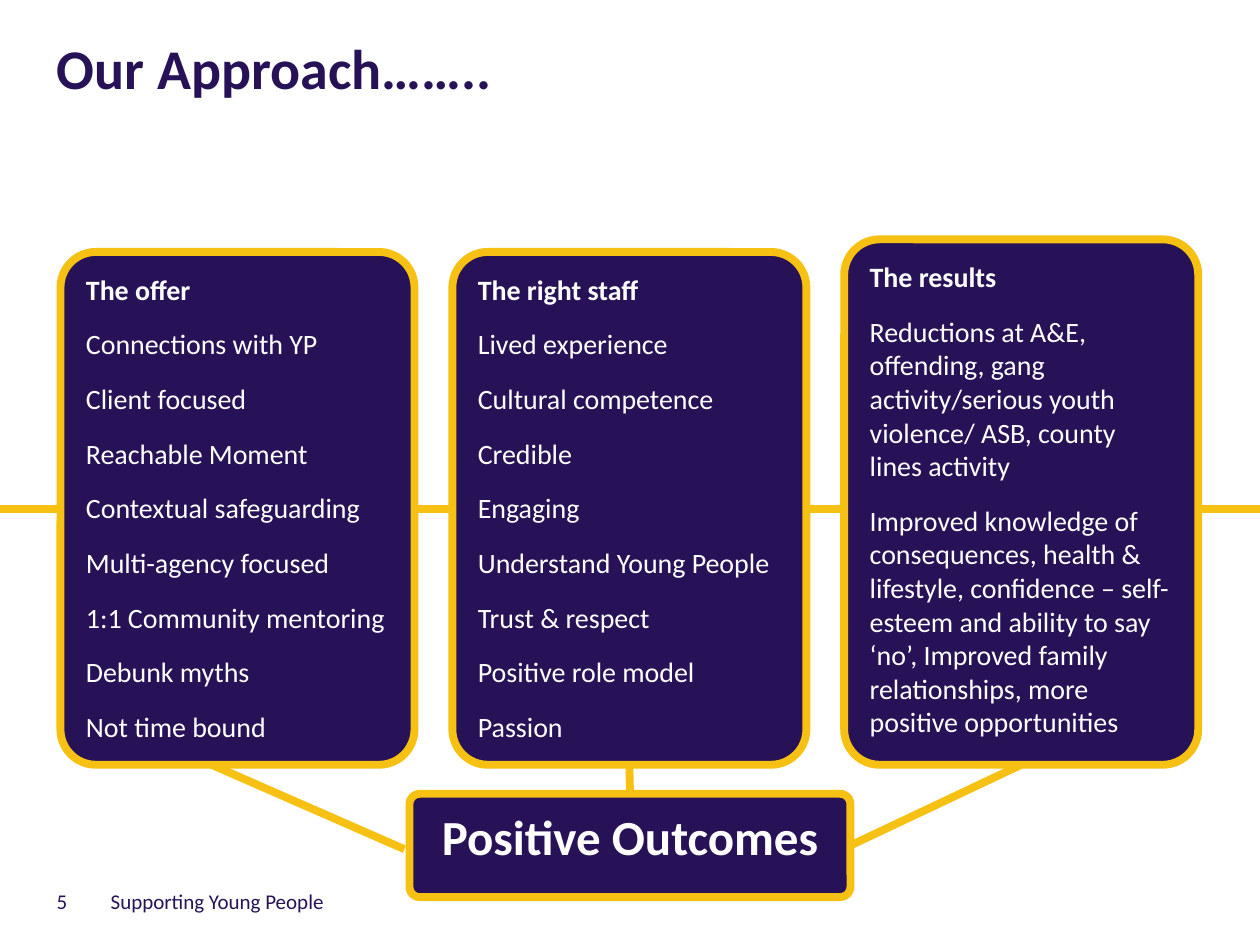
from lxml import etree
from pptx import Presentation
from pptx.dml.color import RGBColor
from pptx.enum import shapes, text
from pptx.oxml.ns import qn
from pptx.util import Inches, Pt

NAVY, GOLD, WHITE = "281257", "F6C112", "FFFFFF"
LINE_WIDTH = Pt(4.5)
CARD_LEFT, CARD_PITCH, CARD_WIDTH, CARD_BOTTOM = 0.48, 3.11, 2.81, 6.07

CARDS = [
    (2.0, "The offer", [
        "Connections with YP", "Client focused", "Reachable Moment",
        "Contextual safeguarding", "Multi-agency focused",
        "1:1 Community mentoring", "Debunk myths", "Not time bound"]),
    (2.0, "The right staff", [
        "Lived experience", "Cultural competence", "Credible", "Engaging",
        "Understand Young People", "Trust & respect", "Positive role model",
        "Passion"]),
    (1.9, "The results", [
        "Reductions at A&E, offending, gang activity/serious youth violence/ "
        "ASB, county lines activity",
        "Improved knowledge of consequences, health & lifestyle, confidence – "
        "self-esteem and ability to say ‘no’, Improved family relationships, "
        "more positive opportunities"]),
]


def rgb(value):
    return RGBColor.from_string(value)


def apply(target, values):
    for name, value in values.items():
        setattr(target, name, value)


def format_font(font, color, size, bold=False):
    apply(font, {"name": "Calibri", "size": Pt(size), "bold": bold})
    font.color.rgb = rgb(color)


def set_title(slide, wording):
    title = slide.shapes.title
    apply(title, {"left": Inches(0.35), "top": Inches(0.28),
                  "width": Inches(8.62), "height": Inches(0.52)})
    title.text_frame.vertical_anchor = text.MSO_ANCHOR.TOP
    title.text_frame.text = wording
    paragraph = title.text_frame.paragraphs[0]
    apply(paragraph, {"alignment": text.PP_ALIGN.LEFT, "line_spacing": 0.9})
    format_font(paragraph.font, NAVY, 32, True)


def add_footer(slide, left, width, wording):
    box = slide.shapes.add_textbox(Inches(left), Inches(6.95), Inches(width), Inches(0.4))
    apply(box.text_frame, {"word_wrap": True, "vertical_anchor": text.MSO_ANCHOR.MIDDLE})
    paragraph = box.text_frame.paragraphs[0]
    paragraph.text = wording
    format_font(paragraph.font, NAVY, 12)


def add_panel(slide, left, top, width, height, heading, items=(), size=16,
              align=text.PP_ALIGN.LEFT):
    """Add a rounded panel with a bold heading above plain items."""
    panel = slide.shapes.add_shape(
        shapes.MSO_SHAPE.ROUNDED_RECTANGLE,
        Inches(left), Inches(top), Inches(width), Inches(height))
    panel.shadow.inherit = False
    panel.adjustments[0] = 0.1
    panel.fill.solid()
    panel.fill.fore_color.rgb = rgb(NAVY)
    panel.line.color.rgb = rgb(GOLD)
    panel.line.width = LINE_WIDTH
    frame = panel.text_frame
    apply(frame, {"word_wrap": True, "vertical_anchor": text.MSO_ANCHOR.TOP,
                  "margin_left": Inches(0.12), "margin_right": Inches(0.12),
                  "margin_top": Inches(0.08), "margin_bottom": Inches(0.08)})
    for index, wording in enumerate([heading, *items]):
        paragraph = frame.add_paragraph() if index else frame.paragraphs[0]
        paragraph.text = wording
        apply(paragraph, {"alignment": align, "space_after": Pt(6),
                          "space_before": Pt(6 if index else 0)})
        format_font(paragraph.font, WHITE, size, bold=index == 0)
    return panel


def add_line(slide, x1=0, y1=0, x2=0, y2=0):
    line = slide.shapes.add_connector(
        shapes.MSO_CONNECTOR.STRAIGHT, Inches(x1), Inches(y1), Inches(x2), Inches(y2))
    line.line.color.rgb = rgb(GOLD)
    line.line.width = LINE_WIDTH
    etree.SubElement(line._element.spPr, qn("a:effectLst"))
    return line


def join(slide, card, outcome, outcome_side):
    """Link the bottom of a card to one side of the outcome panel."""
    line = add_line(slide)
    line.begin_connect(card, 2)
    line.end_connect(outcome, outcome_side)


def main():
    deck = Presentation()
    apply(deck, {"slide_width": Inches(10), "slide_height": Inches(7.5)})
    slide = deck.slides.add_slide(deck.slide_layouts[5])

    add_line(slide, 0, 4.04, 10, 4.04)
    set_title(slide, "Our Approach……..")
    add_footer(slide, 0.78, 3.38, "Supporting Young People")
    add_footer(slide, 0.35, 0.41, "5")

    offer, staff, results = [
        add_panel(slide, CARD_LEFT + column * CARD_PITCH, top, CARD_WIDTH,
                  CARD_BOTTOM - top, heading, items)
        for column, (top, heading, items) in enumerate(CARDS)]
    outcome = add_panel(slide, 3.25, 6.3, 3.5, 0.82, "Positive Outcomes",
                        size=28, align=text.PP_ALIGN.CENTER)

    join(slide, staff, outcome, 0)
    join(slide, results, outcome, 3)
    add_line(slide, 3.21, 6.74, 1.68, CARD_BOTTOM)

    deck.save("out.pptx")


if __name__ == "__main__":
    main()
